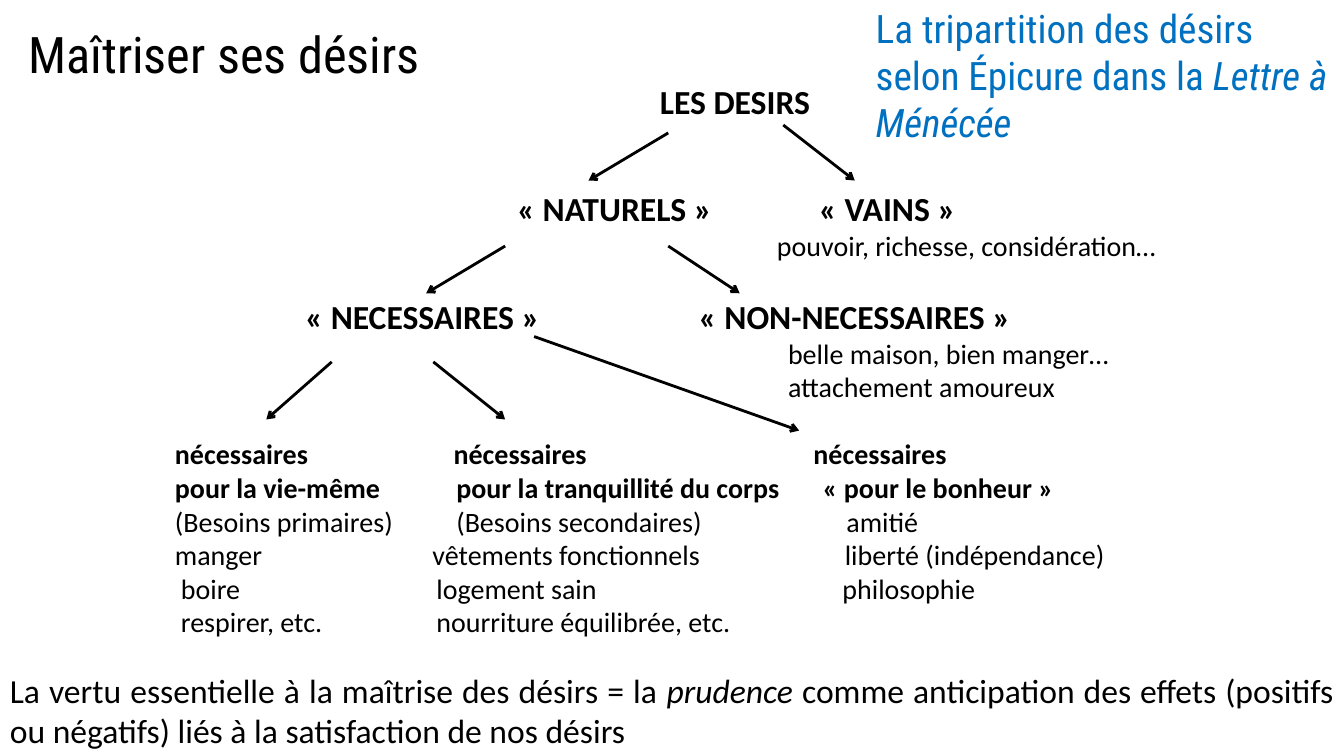
from lxml.etree import SubElement
from pptx import Presentation
from pptx.dml.color import RGBColor
from pptx.enum.shapes import MSO_CONNECTOR
from pptx.enum.text import PP_ALIGN
from pptx.oxml.ns import qn
from pptx.util import Cm, Pt

BLACK, BLUE = "000000", "0070C0"
BODY, DISPLAY = "Calibri", "Roboto Condensed"

# text, left, top, width
CATEGORIES = [
    ("LES DESIRS", 16.63, 2.03, 4.5),
    ("« NATURELS »", 13.03, 4.74, 5.5),
    ("« VAINS »", 20.64, 4.74, 4.5),
    ("« NECESSAIRES »", 7.69, 7.45, 6.5),
    ("« NON-NECESSAIRES »", 17.61, 7.45, 8.5),
]

EXAMPLES = [
    (["pouvoir, richesse, considération…"], 19.58, 5.76),
    (["belle maison, bien manger…", "attachement amoureux"], 19.86, 8.47),
]

# left, width, then (text, indent, bold) for each line
NEEDS = [
    (4.41, 6.2, [
        ("nécessaires", 0, True),
        ("pour la vie-même", 0, True),
        ("(Besoins primaires)", 0, False),
        ("manger", 0, False),
        ("boire", 0.15, False),
        ("respirer, etc.", 0.15, False),
    ]),
    (10.9, 9.4, [
        ("nécessaires", 0.53, True),
        ("pour la tranquillité du corps", 0.6, True),
        ("(Besoins secondaires)", 0.6, False),
        ("vêtements fonctionnels", 0, False),
        ("logement sain", 0.1, False),
        ("nourriture équilibrée, etc.", 0.1, False),
    ]),
    (20.5, 9, [
        ("nécessaires", 0, True),
        ("« pour le bonheur »", 0.23, True),
        ("amitié", 0.83, False),
        ("liberté (indépendance)", 0.79, False),
        ("philosophie", 0.73, False),
    ]),
]

# x and y of the start, then of the head
ARROWS = [
    (16.84, 3.35, 14.83, 4.55),
    (19.74, 3.15, 21.54, 4.55),
    (12.73, 6.2, 10.74, 7.39),
    (16.84, 6.2, 18.64, 7.39),
    (8.36, 9.12, 6.71, 10.57),
    (10.92, 9.12, 12.73, 10.57),
    (13.46, 8.48, 20.14, 10.85),
]


def rgb(color):
    return RGBColor.from_string(color)


def add_box(slide, left, top, width, height):
    """Return the frame of a wrapping text box without margins."""
    tf = slide.shapes.add_textbox(Cm(left), Cm(top), Cm(width), Cm(height)).text_frame
    tf.word_wrap = True
    tf.margin_left = tf.margin_top = tf.margin_right = tf.margin_bottom = 0
    return tf


def add_run(p, text, size=20, font=BODY, color=BLACK, bold=False, italic=False):
    r = p.add_run()
    r.text = text
    r.font.size = Pt(size)
    r.font.name = font
    r.font.color.rgb = rgb(color)
    r.font.bold = bold
    r.font.italic = italic


def add_lines(slide, left, top, width, lines):
    """Add one paragraph for each (text, indent, bold)."""
    tf = add_box(slide, left, top, width, 0.85 * len(lines))
    for i, (text, indent, bold) in enumerate(lines):
        p = tf.add_paragraph() if i else tf.paragraphs[0]
        p._p.get_or_add_pPr().set("marL", str(Cm(indent)))
        add_run(p, text, bold=bold)


def add_arrow(slide, x1, y1, x2, y2):
    cx = slide.shapes.add_connector(MSO_CONNECTOR.STRAIGHT, Cm(x1), Cm(y1), Cm(x2), Cm(y2))
    cx.line.color.rgb = rgb(BLACK)
    cx.line.width = Pt(2)
    SubElement(cx.line._get_or_add_ln(), qn("a:tailEnd"), type="arrow")
    SubElement(cx._element.spPr, qn("a:effectLst"))


def main():
    prs = Presentation()
    prs.slide_width, prs.slide_height = Cm(33.87), Cm(19.05)
    slide = prs.slides.add_slide(prs.slide_layouts[6])

    p = add_box(slide, 0.71, 0.58, 20, 1.55).paragraphs[0]
    add_run(p, "Maîtriser ses désirs", size=36, font=DISPLAY)

    p = add_box(slide, 22.07, 0.1, 11.7, 3.6).paragraphs[0]
    subject = dict(size=28, font=DISPLAY, color=BLUE)
    add_run(p, "La tripartition des désirs selon Épicure dans la ", **subject)
    add_run(p, "Lettre à Ménécée", italic=True, **subject)

    for text, left, top, width in CATEGORIES:
        add_run(add_box(slide, left, top, width, 1.02).paragraphs[0], text, size=24, bold=True)
    for texts, left, top in EXAMPLES:
        add_lines(slide, left, top, 11, [(text, 0, False) for text in texts])
    for left, width, lines in NEEDS:
        add_lines(slide, left, 11.01, width, lines)
    for arrow in ARROWS:
        add_arrow(slide, *arrow)

    p = add_box(slide, 0.25, 16.87, 33.36, 2.05).paragraphs[0]
    p.alignment = PP_ALIGN.JUSTIFY
    add_run(p, "La vertu essentielle à la maîtrise des désirs = la ", size=24)
    add_run(p, "prudence", size=24, italic=True)
    add_run(p, " comme anticipation des effets (positifs ou négatifs) "
               "liés à la satisfaction de nos désirs", size=24)

    prs.save("out.pptx")


if __name__ == "__main__":
    main()
